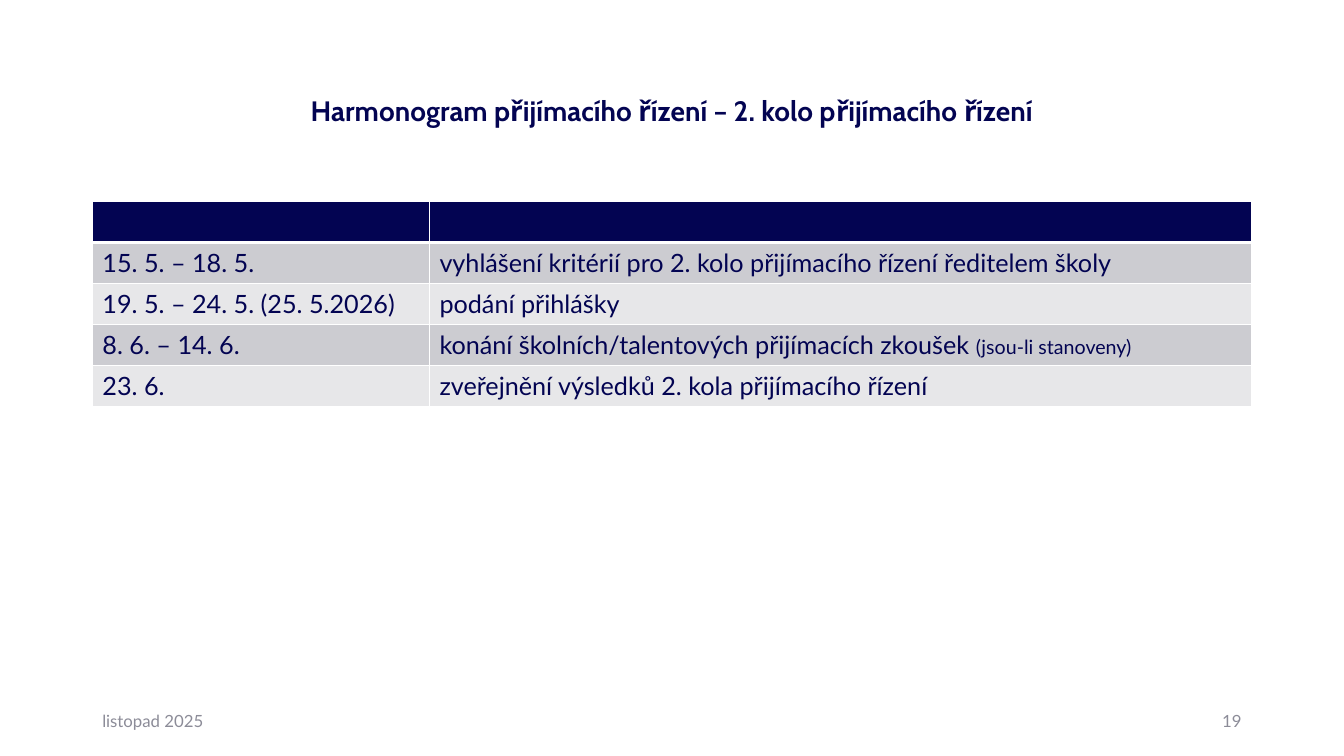
from lxml.etree import SubElement
from pptx import Presentation
from pptx.dml.color import RGBColor
from pptx.enum.text import MSO_ANCHOR as ANCHOR, PP_ALIGN as ALIGN
from pptx.oxml.ns import qn
from pptx.util import Pt

PX = 9525
NAVY, GREY, WHITE = "030452", "8C8C98", "FFFFFF"
BANDS = ["CCCCD1", "E7E7E9"]
COLUMNS = [321, 783]
ROW_HEIGHT = 39
SCHEDULE = [
    ("15. 5. – 18. 5.", "vyhlášení kritérií pro 2. kolo přijímacího řízení ředitelem školy", ""),
    ("19. 5. – 24. 5. (25. 5.2026)", "podání přihlášky", ""),
    ("8. 6. – 14. 6.", "konání školních/talentových přijímacích zkoušek ", "(jsou-li stanoveny)"),
    ("23. 6.", "zveřejnění výsledků 2. kola přijímacího řízení", ""),
]


def px(*lengths):
    """Turn pixel lengths into EMU."""
    return [n * PX for n in lengths]


def rgb(color):
    """Turn a hex string into a colour."""
    return RGBColor.from_string(color)


def add_text(p, text, size=18, font="Lato", color=NAVY, bold=False):
    """Add one formatted run to a paragraph."""
    r = p.add_run()
    r.text = text
    r.font.size, r.font.name, r.font.bold = Pt(size), font, bold
    r.font.color.rgb = rgb(color)


def add_box(s, box, text, align=ALIGN.LEFT, spacing=1.0, **style):
    """Add a vertically centred text box."""
    tf = s.shapes.add_textbox(*px(*box)).text_frame
    tf.word_wrap, tf.vertical_anchor = True, ANCHOR.MIDDLE
    p = tf.paragraphs[0]
    p.alignment, p.line_spacing = align, spacing
    add_text(p, text, **style)


def style_cell(cell, fill, top=1, bottom=1):
    """Give a cell white borders and a solid fill."""
    tc_pr = cell._tc.get_or_add_tcPr()
    for side, width in zip("LRTB", (1, 1, top, bottom)):
        ln = SubElement(tc_pr, qn(f"a:ln{side}"), w=str(Pt(width)))
        SubElement(SubElement(ln, qn("a:solidFill")), qn("a:srgbClr"), val=WHITE)
    cell.fill.solid()
    cell.fill.fore_color.rgb = rgb(fill)


def add_schedule(s, left, top):
    """Add the schedule table with its empty header row."""
    count = len(SCHEDULE) + 1
    size = sum(COLUMNS), ROW_HEIGHT * count
    table = s.shapes.add_table(count, len(COLUMNS), *px(left, top, *size)).table
    table.horz_banding = False
    for column, width in zip(table.columns, px(*COLUMNS)):
        column.width = width
    for cell in table.rows[0].cells:
        style_cell(cell, NAVY, bottom=3)
    for i, (date, event, remark) in enumerate(SCHEDULE, 1):
        for cell, text in zip(table.rows[i].cells, (date, event)):
            style_cell(cell, BANDS[(i - 1) % 2], top=3 if i == 1 else 1)
            add_text(cell.text_frame.paragraphs[0], text)
        if remark:
            add_text(table.cell(i, 1).text_frame.paragraphs[0], remark, size=14)


def add_footer(s, left, top, width, height):
    """Add the date at the left and the slide number at the right."""
    part = 288
    add_box(s, (left, top, part, height), "listopad 2025", size=12, color=GREY)
    add_box(s, (left + width - part, top, part, height), "19",
            align=ALIGN.RIGHT, size=12, color=GREY)


def main():
    """Build the slide and save it."""
    prs = Presentation()
    prs.slide_width, prs.slide_height = px(1280, 720)
    s = prs.slides.add_slide(prs.slide_layouts[6])
    left, width = 88, sum(COLUMNS)
    add_box(s, (left, 38, width, 139),
            "Harmonogram přijímacího řízení – 2. kolo přijímacího řízení",
            align=ALIGN.CENTER, spacing=0.9, size=20, font="Cabin", bold=True)
    add_schedule(s, left, 192)
    add_footer(s, left, 667, width, 38)
    prs.save("out.pptx")


if __name__ == "__main__":
    main()
